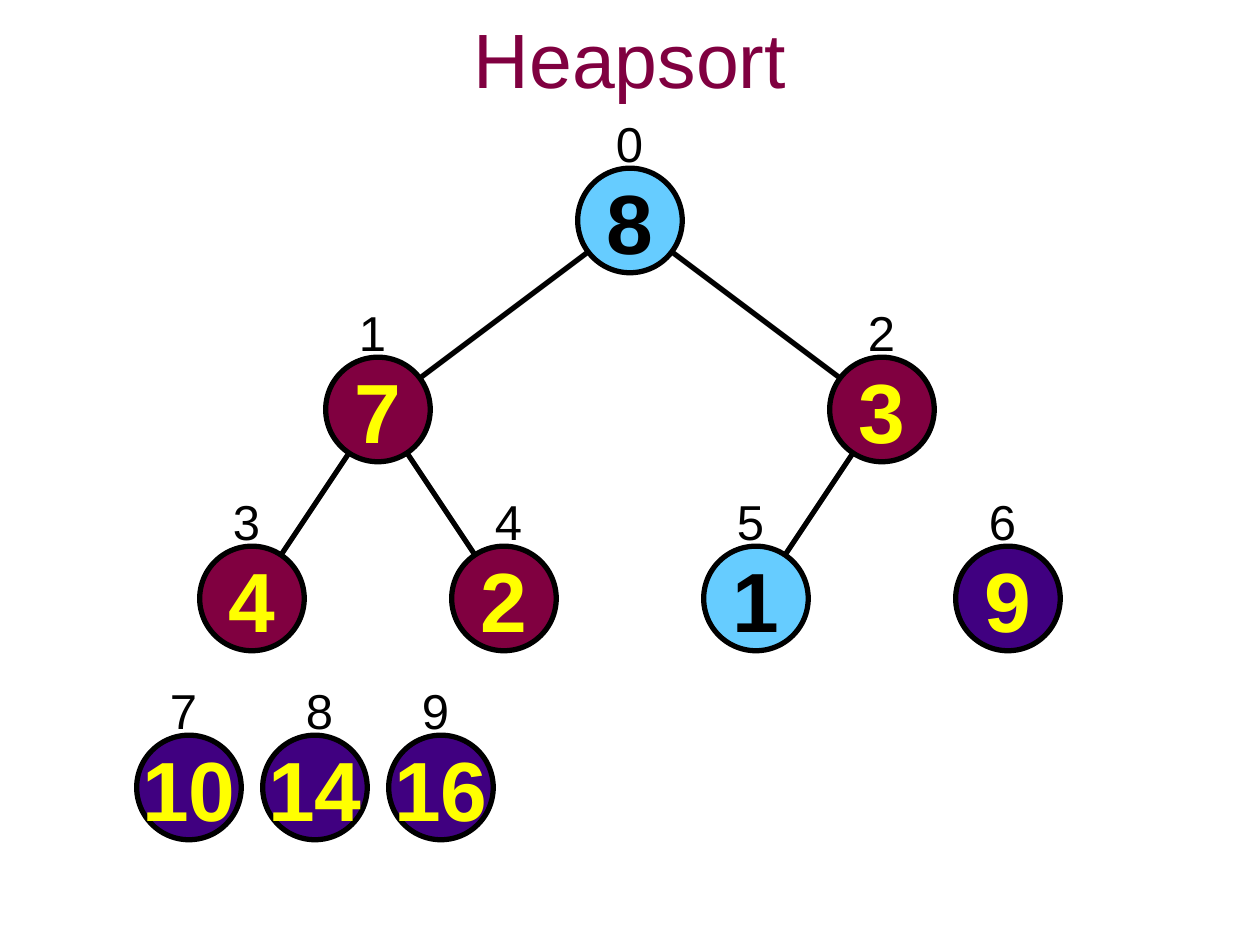
from pptx import Presentation
from pptx.dml.color import RGBColor
from pptx.enum.shapes import MSO_CONNECTOR, MSO_SHAPE
from pptx.enum.text import MSO_ANCHOR, MSO_AUTO_SIZE, PP_ALIGN
from pptx.oxml.ns import qn
from pptx.util import Inches, Pt
from lxml import etree

STRAIGHT = MSO_CONNECTOR.STRAIGHT
OVAL = MSO_SHAPE.OVAL
MIDDLE = MSO_ANCHOR.MIDDLE
CENTER = PP_ALIGN.CENTER
LEFT = PP_ALIGN.LEFT
NO_FIT = MSO_AUTO_SIZE.NONE
GROW = MSO_AUTO_SIZE.SHAPE_TO_FIT_TEXT

BLACK, YELLOW = "000000", "FFFF00"
BLUE, MAROON, PURPLE = "66CCFF", "800040", "400080"
DIAMETER = 0.83
HEAP_SIZE = 6


def rgb(color):
    return RGBColor.from_string(color)


def write(tf, text, size, color, align, bold=False):
    p = tf.paragraphs[0]
    p.text = text
    p.alignment = align
    p.font.name = "Arial"
    p.font.size = Pt(size)
    p.font.bold = bold
    p.font.color.rgb = rgb(color)


prs = Presentation()
prs.slide_width, prs.slide_height = Inches(10), Inches(7.5)
s = prs.slides.add_slide(prs.slide_layouts[5])

title = s.shapes.title
title.left, title.top = Inches(0.75), Inches(0.08)
title.width, title.height = Inches(8.5), Inches(0.75)
title.text_frame.vertical_anchor = MIDDLE
title.text_frame.auto_size = NO_FIT
write(title.text_frame, "Heapsort", 44, MAROON, CENTER)

# value, centre x, centre y, fill, index label left
nodes = [
    (8, 5, 1.75, BLUE, 4.79),
    (7, 3, 3.25, MAROON, 2.75),
    (3, 7, 3.25, MAROON, 6.79),
    (4, 2, 4.75, MAROON, 1.75),
    (2, 4, 4.75, MAROON, 3.83),
    (1, 6, 4.75, BLUE, 5.75),
    (9, 8, 4.75, PURPLE, 7.75),
    (10, 1.5, 6.25, PURPLE, 1.25),
    (14, 2.5, 6.25, PURPLE, 2.33),
    (16, 3.5, 6.25, PURPLE, 3.25),
]

for child in range(1, HEAP_SIZE):
    x1, y1 = nodes[(child - 1) // 2][1:3]
    x2, y2 = nodes[child][1:3]
    edge = s.shapes.add_connector(STRAIGHT, Inches(x1), Inches(y1), Inches(x2), Inches(y2))
    edge.line.color.rgb = rgb(BLACK)
    edge.line.width = Pt(3)
    etree.SubElement(edge._element.spPr, qn("a:effectLst"))

for index, (value, x, y, fill, label_left) in enumerate(nodes):
    sp = s.shapes.add_shape(OVAL, Inches(x - DIAMETER / 2), Inches(y - DIAMETER / 2),
                            Inches(DIAMETER), Inches(DIAMETER))
    sp.shadow.inherit = False
    sp.fill.solid()
    sp.fill.fore_color.rgb = rgb(fill)
    sp.line.color.rgb = rgb(BLACK)
    sp.line.width = Pt(3)
    tf = sp.text_frame
    tf.word_wrap = False
    tf.vertical_anchor = MIDDLE
    write(tf, str(value), 48, BLACK if fill == BLUE else YELLOW, CENTER, True)

    label = s.shapes.add_textbox(Inches(label_left), Inches(y - 0.9), Inches(0.42), Inches(0.57))
    label.text_frame.word_wrap = False
    label.text_frame.auto_size = GROW
    write(label.text_frame, str(index), 28, BLACK, LEFT)

prs.save("out.pptx")
